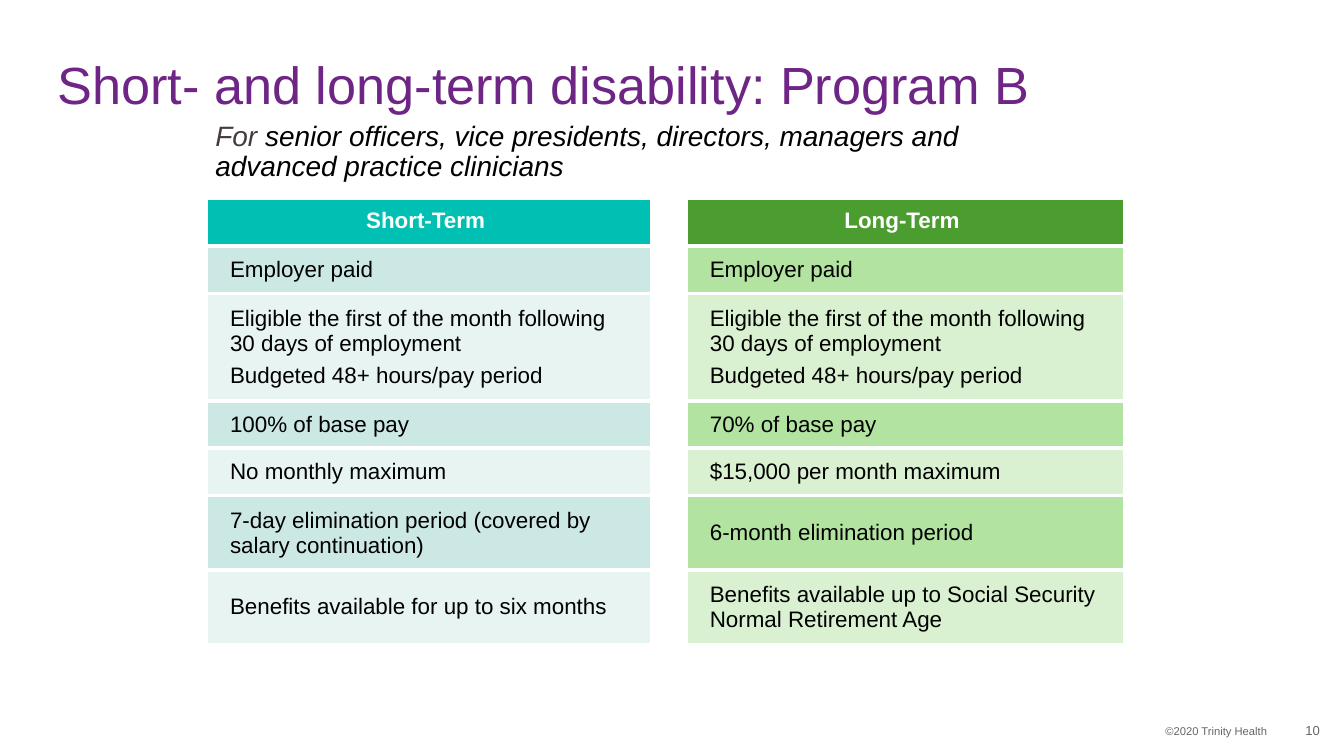
from lxml.etree import SubElement as add_element
from pptx import Presentation
from pptx.dml.color import RGBColor
from pptx.enum.text import MSO_ANCHOR as Anchor, PP_ALIGN as Align
from pptx.oxml.ns import qn
from pptx.util import Inches, Pt

PURPLE = RGBColor(0x6E, 0x25, 0x85)
GRAY = RGBColor(0x66, 0x66, 0x66)
CHARCOAL = RGBColor(0x44, 0x3D, 0x3E)
BLACK = RGBColor(0, 0, 0)
WHITE = RGBColor(0xFF, 0xFF, 0xFF)
TEAL = RGBColor(0x00, 0xBF, 0xB3)
TEAL_BANDS = RGBColor(0xCC, 0xE8, 0xE5), RGBColor(0xE7, 0xF4, 0xF2)
GREEN = RGBColor(0x4C, 0x9D, 0x2F)
GREEN_BANDS = RGBColor(0xB2, 0xE3, 0xA1), RGBColor(0xD9, 0xF1, 0xD0)

GRID_COLUMNS = 100
SLIDE_WIDTH = Inches(10)
SLIDE_HEIGHT = SLIDE_WIDTH * 9 // 16
UNIT = SLIDE_WIDTH // GRID_COLUMNS
COLUMN_WIDTHS = 33, 2.7, 32.5
ROW_HEIGHTS = 3.52, 3.52, 7.92, 3.52, 3.52, 5.53, 5.53

ELIGIBILITY = ["Eligible the first of the month following \n30 days of employment",
               "Budgeted 48+ hours/pay period"]
SHORT_TERM = [["Short-Term "], ["Employer paid"], ELIGIBILITY, ["100% of base pay"],
              ["No monthly maximum"],
              ["7-day elimination period (covered by salary continuation)"],
              ["Benefits available for up to six months"]]
LONG_TERM = [["Long-Term "], ["Employer paid"], ELIGIBILITY, ["70% of base pay"],
             ["$15,000 per month maximum"], ["6-month elimination period"],
             ["Benefits available up to Social Security Normal Retirement Age"]]


def grid(*lengths):
    """Turn lengths in grid units into slide lengths."""
    return [round(length * UNIT) for length in lengths]


def apply_format(target, values):
    """Set each named attribute on the target."""
    for name, value in values.items():
        setattr(target, name, value)


def set_margins(target, left, top, right, bottom):
    """Set the four inner margins in grid units."""
    names = "margin_left", "margin_top", "margin_right", "margin_bottom"
    apply_format(target, dict(zip(names, grid(left, top, right, bottom))))


def add_text(paragraph, text, color, size, **font_values):
    """Add runs to a paragraph, breaking the line at each newline."""
    for index, line in enumerate(text.split("\n")):
        if index:
            paragraph.add_line_break()
        run = paragraph.add_run()
        run.text = line
        run.font.color.rgb = color
        apply_format(run.font, {"name": "Arial", "size": Pt(size), **font_values})


def add_label(slide, place, margins=(1, 0.5, 1, 0.5), anchor=Anchor.TOP, **paragraph_values):
    """Add a wrapping text box and return its first paragraph."""
    frame = slide.shapes.add_textbox(*grid(*place)).text_frame
    apply_format(frame, {"word_wrap": True, "vertical_anchor": anchor})
    set_margins(frame, *margins)
    paragraph = frame.paragraphs[0]
    apply_format(paragraph, paragraph_values)
    return paragraph


def add_borders(cell, top, bottom):
    """Give a cell white borders, with top and bottom widths in points."""
    properties = cell._tc.get_or_add_tcPr()
    for side, width in {"L": 1, "R": 1, "T": top, "B": bottom}.items():
        line = add_element(properties, qn(f"a:ln{side}"), w=str(Pt(width)))
        fill = add_element(line, qn("a:solidFill"))
        add_element(fill, qn("a:srgbClr"), val=str(WHITE))


def fill_cell(cell, texts, color, is_header):
    """Write a cell's paragraphs on a solid fill."""
    cell.fill.solid()
    cell.fill.fore_color.rgb = color
    cell.vertical_anchor = Anchor.TOP if is_header else Anchor.MIDDLE
    set_margins(cell, 0.72, 0.72, 0.72, 0.72)
    for index, text in enumerate(texts):
        paragraph = cell.text_frame.add_paragraph() if index else cell.text_frame.paragraphs[0]
        paragraph.space_after = Pt(2)
        if index:
            paragraph.space_before = Pt(2)
        if is_header:
            paragraph.alignment = Align.CENTER
        else:
            paragraph._p.get_or_add_pPr().set("marL", str(UNIT))
        add_text(paragraph, text, WHITE if is_header else BLACK, 12, bold=is_header)


def add_benefits_table(slide):
    """Add the two benefit columns with an empty gap column between them."""
    row_count, column_count = len(ROW_HEIGHTS), len(COLUMN_WIDTHS)
    place = grid(15.4, 14.8, sum(COLUMN_WIDTHS), sum(ROW_HEIGHTS))
    table = slide.shapes.add_table(row_count, column_count, *place).table
    apply_format(table, {"first_row": False, "horz_banding": False})
    for column, width in zip(table.columns, grid(*COLUMN_WIDTHS)):
        column.width = width
    for row, height in zip(table.rows, grid(*ROW_HEIGHTS)):
        row.height = height
    programs = {0: (SHORT_TERM, TEAL, TEAL_BANDS), 2: (LONG_TERM, GREEN, GREEN_BANDS)}
    for row in range(row_count):
        for column in range(column_count):
            cell = table.cell(row, column)
            add_borders(cell, 2.25 if row else 1, 2.25 if row < row_count - 1 else 1)
            if column in programs:
                texts, header_color, bands = programs[column]
                color = bands[(row - 1) % 2] if row else header_color
                fill_cell(cell, texts[row], color, row == 0)
            else:
                cell.fill.background()
                set_margins(cell, 0, 0, 0, 0)


def main():
    """Build the disability benefits slide."""
    presentation = Presentation()
    presentation.slide_width = SLIDE_WIDTH
    presentation.slide_height = SLIDE_HEIGHT
    slide = presentation.slides.add_slide(presentation.slide_layouts[6])

    number = add_label(slide, (93.8, 52.85, 4.4, 3), (1, 0.5, 0, 0.5), Anchor.MIDDLE,
                       alignment=Align.RIGHT)
    add_text(number, "10", GRAY, 7)
    copyright_line = add_label(slide, (53.35, 53.4, 41.9, 2), alignment=Align.RIGHT)
    add_text(copyright_line, "©2020 Trinity Health", GRAY, 6)
    title = add_label(slide, (4.3, 3.8, 90, 5.5), (0, 0, 0, 0), Anchor.MIDDLE, line_spacing=0.9)
    add_text(title, "Short- and long-term disability: Program B", PURPLE, 28)
    audience = add_label(slide, (15.04, 8.64, 68.5, 5.5), line_spacing=Pt(15.8),
                         space_after=Pt(4.5))
    add_text(audience, "For ", CHARCOAL, 15, italic=True)
    add_text(audience, "senior officers, vice presidents, directors, managers and \n"
             "advanced practice clinicians", BLACK, 15, italic=True)
    add_benefits_table(slide)

    presentation.save("out.pptx")


if __name__ == "__main__":
    main()
